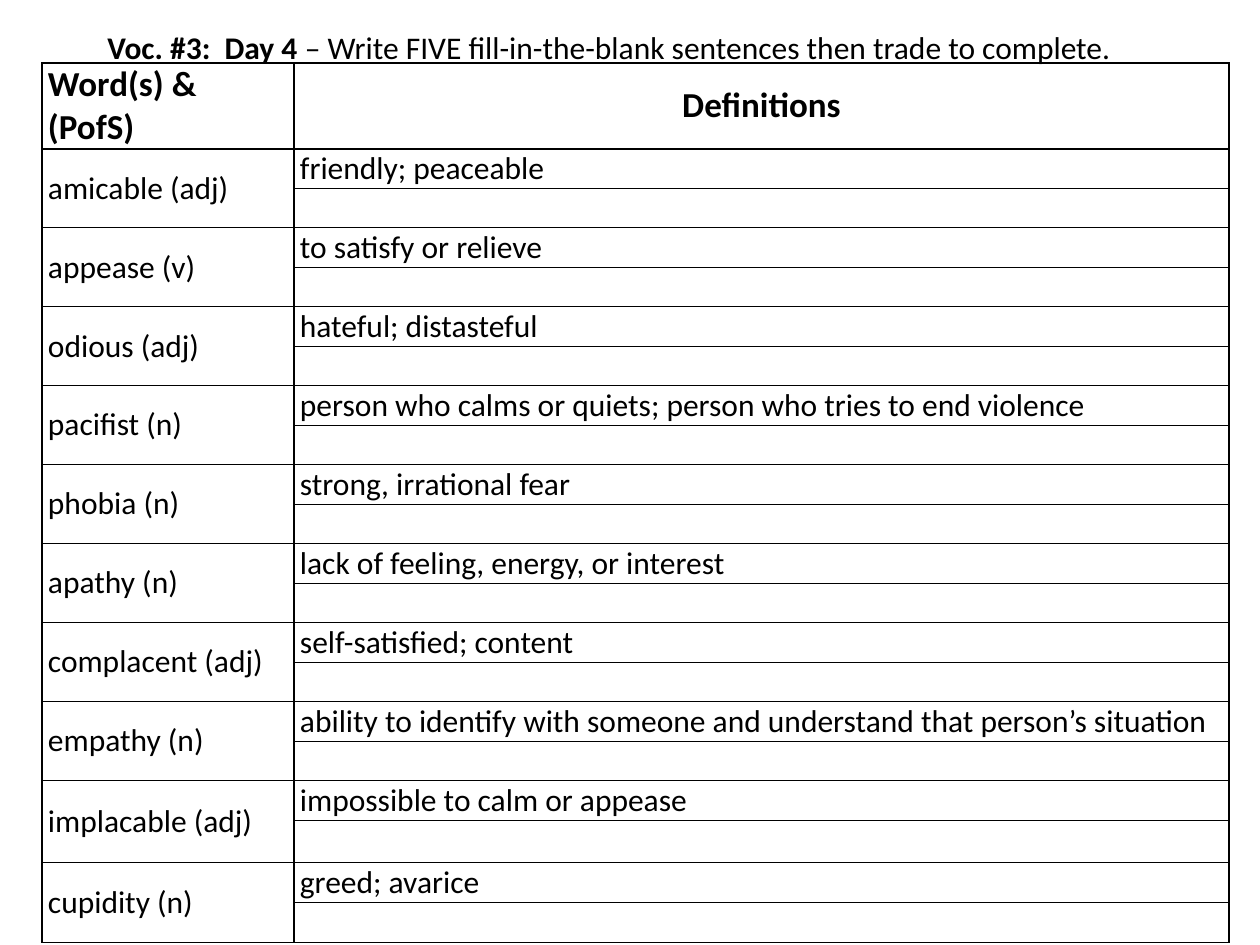
import pptx
import pptx.dml.color
import pptx.enum.text
import pptx.oxml
import pptx.oxml.ns
import pptx.util

PX = 914400 / 126
BLACK = pptx.dml.color.RGBColor(0, 0, 0)
FONT = "Calibri"
MIDDLE = pptx.enum.text.MSO_ANCHOR.MIDDLE
CENTER = pptx.enum.text.PP_ALIGN.CENTER

TITLE = [
    ("Voc. #3:  Day 4 ", True),
    ("– Write FIVE fill-in-the-blank sentences then trade to complete.", False),
]
HEADINGS = ("Word(s) & (PofS)", "Definitions")
WORDS = [
    ("amicable (adj)", "friendly; peaceable"),
    ("appease (v)", "to satisfy or relieve"),
    ("odious (adj)", "hateful; distasteful"),
    ("pacifist (n)", "person who calms or quiets; person who tries to end violence"),
    ("phobia (n)", "strong, irrational fear"),
    ("apathy (n)", "lack of feeling, energy, or interest"),
    ("complacent (adj)", "self-satisfied; content"),
    ("empathy (n)", "ability to identify with someone and understand that person’s situation"),
    ("implacable (adj)", "impossible to calm or appease"),
    ("cupidity (n)", "greed; avarice"),
]
WORD_WIDTH = 252
HEADING_HEIGHT = 54
DEFINITION_HEIGHT = 40
BLANK_HEIGHT = 39
TALL_BLANKS = {"implacable (adj)": 42, "cupidity (n)": 40}


def px(length):
    return pptx.util.Emu(round(length * PX))


def format_span(span, size, bold):
    span.font.name = FONT
    span.font.size = pptx.util.Pt(size)
    span.font.bold = bold
    span.font.color.rgb = BLACK


def set_borders(cell):
    properties = cell._tc.get_or_add_tcPr()
    for position, side in enumerate(("lnL", "lnR", "lnT", "lnB")):
        border = pptx.oxml.parse_xml(
            f'<a:{side} {pptx.oxml.ns.nsdecls("a")} w="12700">'
            f'<a:solidFill><a:srgbClr val="{BLACK}"/></a:solidFill></a:{side}>'
        )
        properties.insert(position, border)


def prepare_cell(cell):
    cell.margin_left = cell.margin_right = px(6)
    cell.margin_top = cell.margin_bottom = 0
    cell.vertical_anchor = MIDDLE
    cell.fill.background()
    set_borders(cell)


def write_cell(cell, text, size=18, bold=False):
    cell.text_frame.text = text
    format_span(cell.text_frame.paragraphs[0].runs[0], size, bold)


def add_title(page, left, top, width, height):
    box = page.shapes.add_textbox(px(left), px(top), px(width), px(height))
    frame = box.text_frame
    frame.word_wrap = True
    frame.auto_size = pptx.enum.text.MSO_AUTO_SIZE.SHAPE_TO_FIT_TEXT
    frame.vertical_anchor = MIDDLE
    para = frame.paragraphs[0]
    para._p.get_or_add_pPr().set("indent", str(px(63)))
    for text, bold in TITLE:
        span = para.add_run()
        span.text = text
        format_span(span, 18, bold)


def add_vocabulary(page, left, top, width, height):
    row_count = 1 + 2 * len(WORDS)
    table = page.shapes.add_table(
        row_count, 2, px(left), px(top), px(width), px(height)
    ).table
    table.first_row = False
    table.horz_banding = False
    table.columns[0].width = px(WORD_WIDTH)
    table.columns[1].width = px(width - WORD_WIDTH)
    for cell in table.iter_cells():
        prepare_cell(cell)

    table.rows[0].height = px(HEADING_HEIGHT)
    for column, heading in enumerate(HEADINGS):
        write_cell(table.cell(0, column), heading, 20, True)
    table.cell(0, 1).text_frame.paragraphs[0].alignment = CENTER

    for index, (word, definition) in enumerate(WORDS):
        row = 1 + 2 * index
        table.rows[row].height = px(DEFINITION_HEIGHT)
        table.rows[row + 1].height = px(TALL_BLANKS.get(word, BLANK_HEIGHT))
        table.cell(row, 0).merge(table.cell(row + 1, 0))
        write_cell(table.cell(row, 0), word)
        write_cell(table.cell(row, 1), definition)


def main():
    deck = pptx.Presentation()
    deck.slide_width = px(1260)
    deck.slide_height = px(945)
    page = deck.slides.add_slide(deck.slide_layouts[6])
    add_vocabulary(page, 42, 63, 1187, 880)
    add_title(page, 32, 22, 1113, 50)
    deck.save("out.pptx")


if __name__ == "__main__":
    main()
